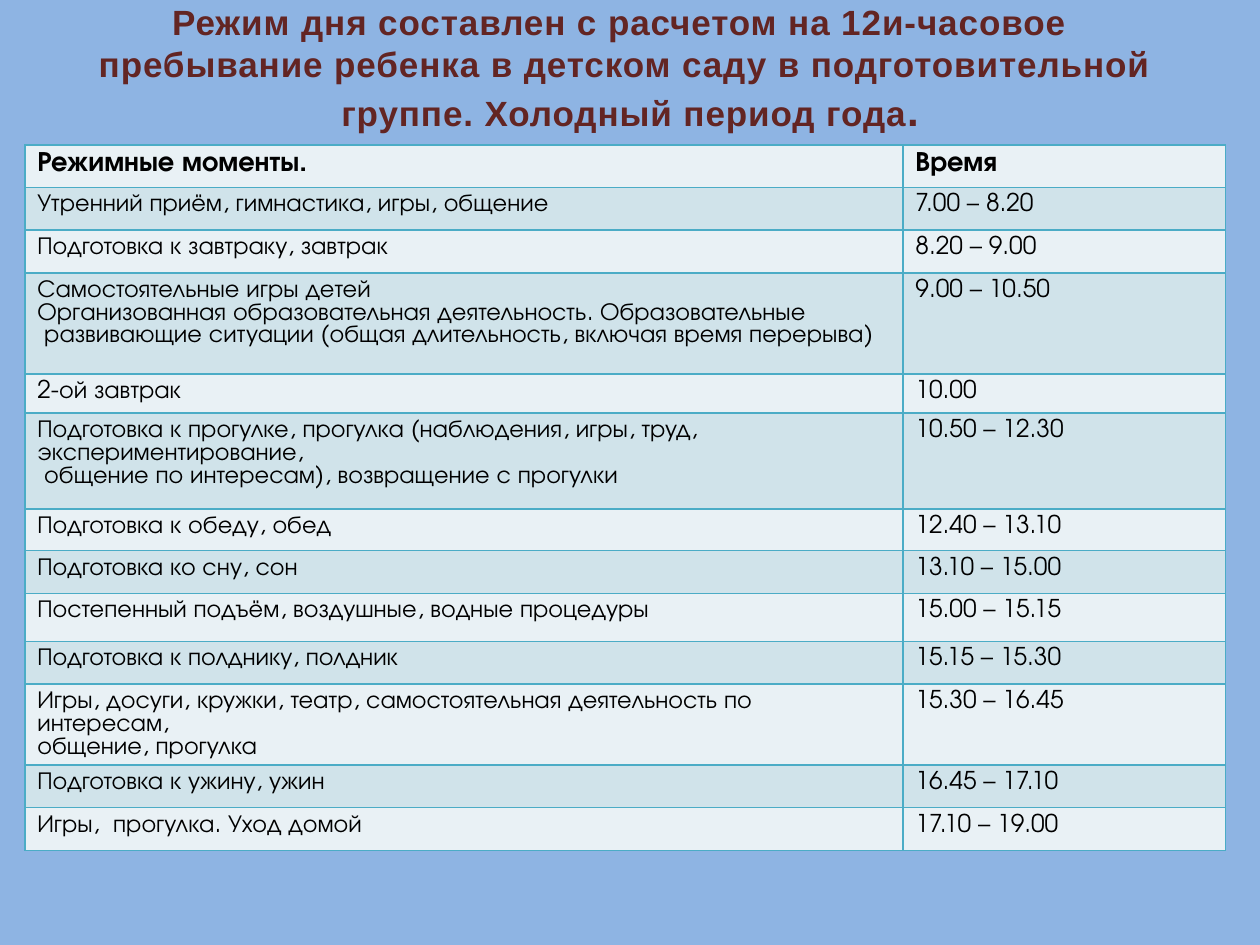
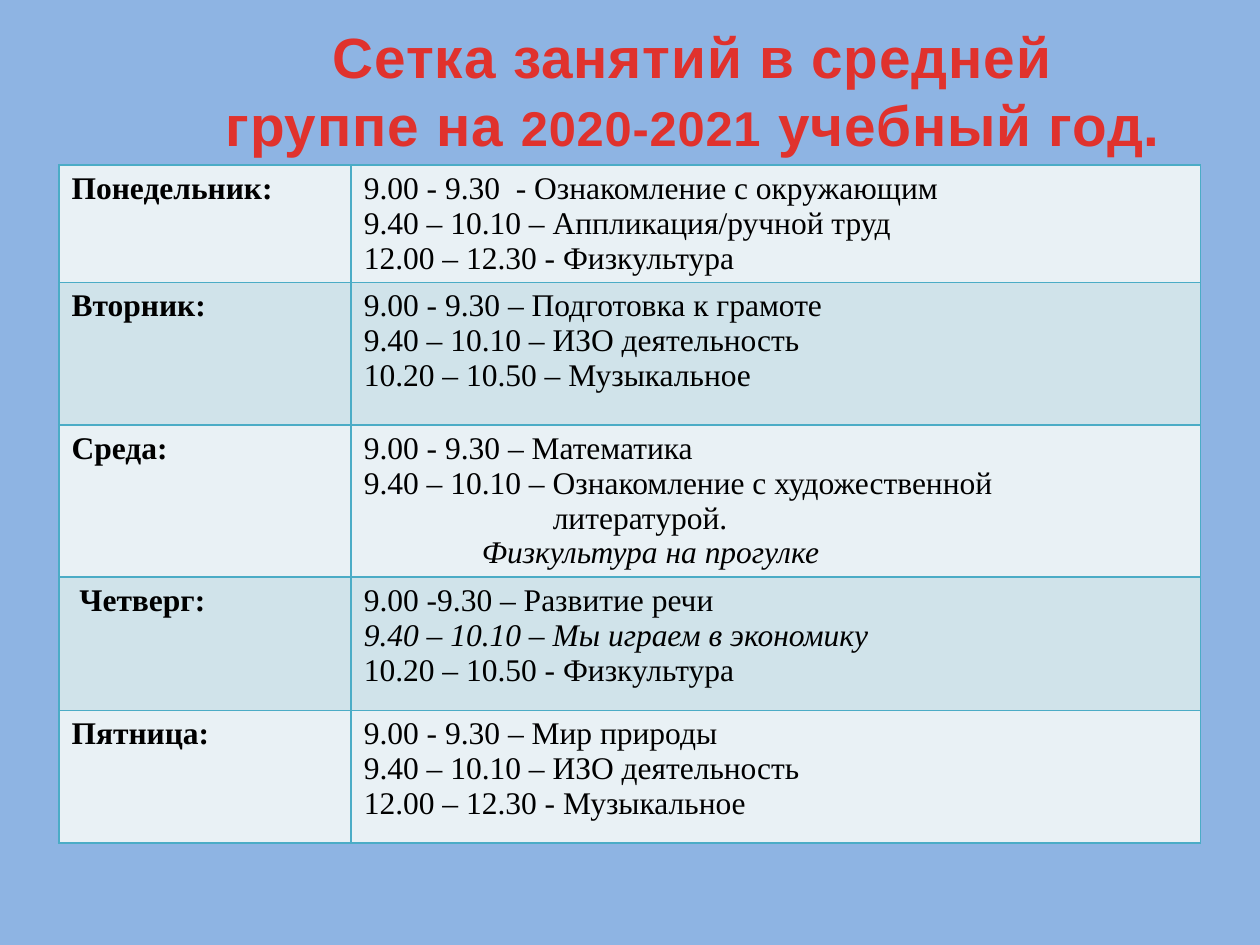
from dataclasses import dataclass

from lxml.etree import SubElement
from pptx import Presentation
from pptx.dml.color import RGBColor
from pptx.enum.text import MSO_ANCHOR, PP_ALIGN
from pptx.oxml.ns import qn
from pptx.util import Cm, Pt

COLOURS = {
    "background": "8EB4E3",
    "light": "E9F1F5",
    "dark": "D0E3EA",
    "border": "4BACC6",
    "text": "000000",
    "brown": "632523",
    "red": "E0322D",
}
TITLE_FONT = "Arial"
ROUTINE_FONT = "TeX Gyre Adventor"
LESSON_FONT = "Times New Roman"


@dataclass
class Line:
    """One paragraph of a table cell."""
    text: str
    size: float
    bold: bool = False
    italic: bool = False
    indent: float = 0
    spacing: float = 0


class Schedule:
    """Holds the shared style and the current slide."""

    def __init__(self):
        self.deck = Presentation()
        self.deck.slide_width = Cm(25.4)
        self.deck.slide_height = Cm(19.05)
        self.page = None

    def add_page(self):
        """Start a title-only slide with the shared background."""
        self.page = self.deck.slides.add_slide(self.deck.slide_layouts[5])
        fill = self.page.background.fill
        fill.solid()
        fill.fore_color.rgb = RGBColor.from_string(COLOURS["background"])

    def add_span(self, para, text, font, size, colour, bold=False, italic=False):
        """Add one formatted run."""
        span = para.add_run()
        span.text = text
        span.font.name = font
        span.font.size = Pt(size)
        span.font.bold = bold
        span.font.italic = italic
        span.font.color.rgb = RGBColor.from_string(COLOURS[colour])
        return span

    def add_title(self, place, lines, colour, bottom=0.13):
        """Fill the title placeholder with lines of (text, size) runs."""
        box = self.page.shapes.title
        box.left, box.top, box.width, box.height = map(Cm, place)
        frame = box.text_frame
        frame.word_wrap = True
        frame.vertical_anchor = MSO_ANCHOR.MIDDLE
        frame.margin_bottom = Cm(bottom)
        para = frame.paragraphs[0]
        para.alignment = PP_ALIGN.CENTER
        para.line_spacing = 1.0
        for number, line in enumerate(lines):
            if number:
                para.add_line_break()
            for text, size in line:
                span = self.add_span(para, text, TITLE_FONT, size, colour, bold=True)
                span.font._element.set("spc", "50")

    def add_borders(self, cell):
        """Draw a thin line on all four sides of a cell."""
        properties = cell._tc.get_or_add_tcPr()
        for position, side in enumerate(("lnL", "lnR", "lnT", "lnB")):
            line = properties.makeelement(qn(f"a:{side}"), {"w": str(Pt(1))})
            fill = SubElement(line, qn("a:solidFill"))
            SubElement(fill, qn("a:srgbClr"), val=COLOURS["border"])
            properties.insert(position, line)

    def fill_cell(self, cell, lines, font, shade):
        """Shade a cell and write its lines."""
        cell.fill.solid()
        cell.fill.fore_color.rgb = RGBColor.from_string(COLOURS[shade])
        self.add_borders(cell)
        frame = cell.text_frame
        for number, line in enumerate(lines):
            para = frame.add_paragraph() if number else frame.paragraphs[0]
            if line.indent:
                para._p.get_or_add_pPr().set("marL", str(Cm(line.indent)))
            if line.spacing:
                para.line_spacing = Pt(line.spacing)
            self.add_span(para, line.text, font, line.size, "text", line.bold, line.italic)

    def add_table(self, corner, widths, heights, rows, font):
        """Add a two-tone table from rows of cells of lines."""
        left, top = map(Cm, corner)
        table = self.page.shapes.add_table(
            len(rows), len(widths), left, top, Cm(sum(widths)), Cm(sum(heights))
        ).table
        table.first_row = table.horz_banding = False
        for column, width in zip(table.columns, widths):
            column.width = Cm(width)
        for number, (row, height, cells) in enumerate(zip(table.rows, heights, rows)):
            row.height = Cm(height)
            shade = "dark" if number % 2 else "light"
            for cell, lines in zip(row.cells, cells):
                self.fill_cell(cell, lines, font, shade)


ROUTINE = [
    (0.86, ["Утренний приём, гимнастика, игры, общение"], "7.00 – 8.20"),
    (0.86, ["Подготовка к завтраку, завтрак"], "8.20 – 9.00"),
    (2.04, ["Самостоятельные игры детей",
            "Организованная образовательная деятельность. Образовательные",
            " развивающие ситуации (общая длительность, включая время перерыва)"],
     "9.00 – 10.50"),
    (0.79, ["2-ой завтрак"], "10.00"),
    (1.93, ["Подготовка к прогулке, прогулка (наблюдения, игры, труд, экспериментирование,",
            " общение по интересам), возвращение с прогулки"], "10.50 – 12.30"),
    (0.84, ["Подготовка к обеду, обед"], "12.40 – 13.10"),
    (0.86, ["Подготовка ко сну, сон"], "13.10 – 15.00"),
    (0.97, ["Постепенный подъём, воздушные, водные процедуры"], "15.00 – 15.15"),
    (0.86, ["Подготовка к полднику, полдник"], "15.15 – 15.30"),
    (1.62, ["Игры, досуги, кружки, театр, самостоятельная деятельность по интересам,",
            "общение, прогулка"], "15.30 – 16.45"),
    (0.86, ["Подготовка к ужину, ужин"], "16.45 – 17.10"),
    (0.86, ["Игры,  прогулка. Уход домой"], "17.10 – 19.00"),
]


def lesson(text, **style):
    """Return a line of the lesson grid."""
    return Line(text, 18, **style)


LESSONS = [
    (2.36, "Понедельник:", [
        lesson("9.00 - 9.30  - Ознакомление с окружающим"),
        lesson("9.40 – 10.10 – Аппликация/ручной труд"),
        lesson("12.00 – 12.30 - Физкультура")]),
    (2.87, "Вторник:", [
        lesson("9.00 - 9.30 – Подготовка к грамоте"),
        lesson("9.40 – 10.10 – ИЗО деятельность"),
        lesson("10.20 – 10.50 – Музыкальное")]),
    (3.06, "Среда:", [
        lesson("9.00 - 9.30 – Математика"),
        lesson("9.40 – 10.10 – Ознакомление с художественной"),
        lesson("литературой.", indent=3.81),
        lesson("Физкультура на прогулке", italic=True, indent=2.38)]),
    (2.69, " Четверг:", [
        lesson("9.00 -9.30 – Развитие речи"),
        lesson("9.40 – 10.10 – Мы играем в экономику", italic=True),
        lesson("10.20 – 10.50 - Физкультура")]),
    (2.67, "Пятница:", [
        lesson("9.00 - 9.30 – Мир природы"),
        lesson("9.40 – 10.10 – ИЗО деятельность"),
        lesson("12.00 – 12.30 - Музыкальное")]),
]


def add_routine(schedule):
    """Build the daily routine slide."""
    schedule.add_page()
    schedule.add_title((1.09, 0, 23.01, 2.72), [
        [("Режим дня составлен с расчетом на 12и-часовое ", 20)],
        [("пребывание ребенка в детском саду в подготовительной", 20)],
        [(" группе. Холодный период года", 20), (".", 24)],
    ], "brown")
    rows = [[[Line(text, 16, bold=True, spacing=14.5)]
             for text in ("Режимные моменты.", "Время")]]
    for _, moments, time in ROUTINE:
        rows.append([[Line(text, 14, spacing=13) for text in texts]
                     for texts in (moments, [time])])
    heights = [0.86] + [height for height, _, _ in ROUTINE]
    schedule.add_table((0.5, 2.92), (17.7, 6.5), heights, rows, ROUTINE_FONT)


def add_lessons(schedule):
    """Build the weekly lesson grid slide."""
    schedule.add_page()
    schedule.add_title((2.54, 0, 22.86, 3.94), [
        [("Сетка занятий в средней", 32.4)],
        [("группе на ", 32.4), ("2020-2021", 27.9), (" учебный год.", 32.4)],
    ], "red", bottom=0.45)
    rows = [[[lesson(day, bold=True)], lines] for _, day, lines in LESSONS]
    heights = [height for height, _, _ in LESSONS]
    schedule.add_table((1.19, 3.33), (5.89, 17.12), heights, rows, LESSON_FONT)


def main():
    """Build and save the deck."""
    schedule = Schedule()
    add_routine(schedule)
    add_lessons(schedule)
    schedule.deck.save("out.pptx")


if __name__ == "__main__":
    main()
